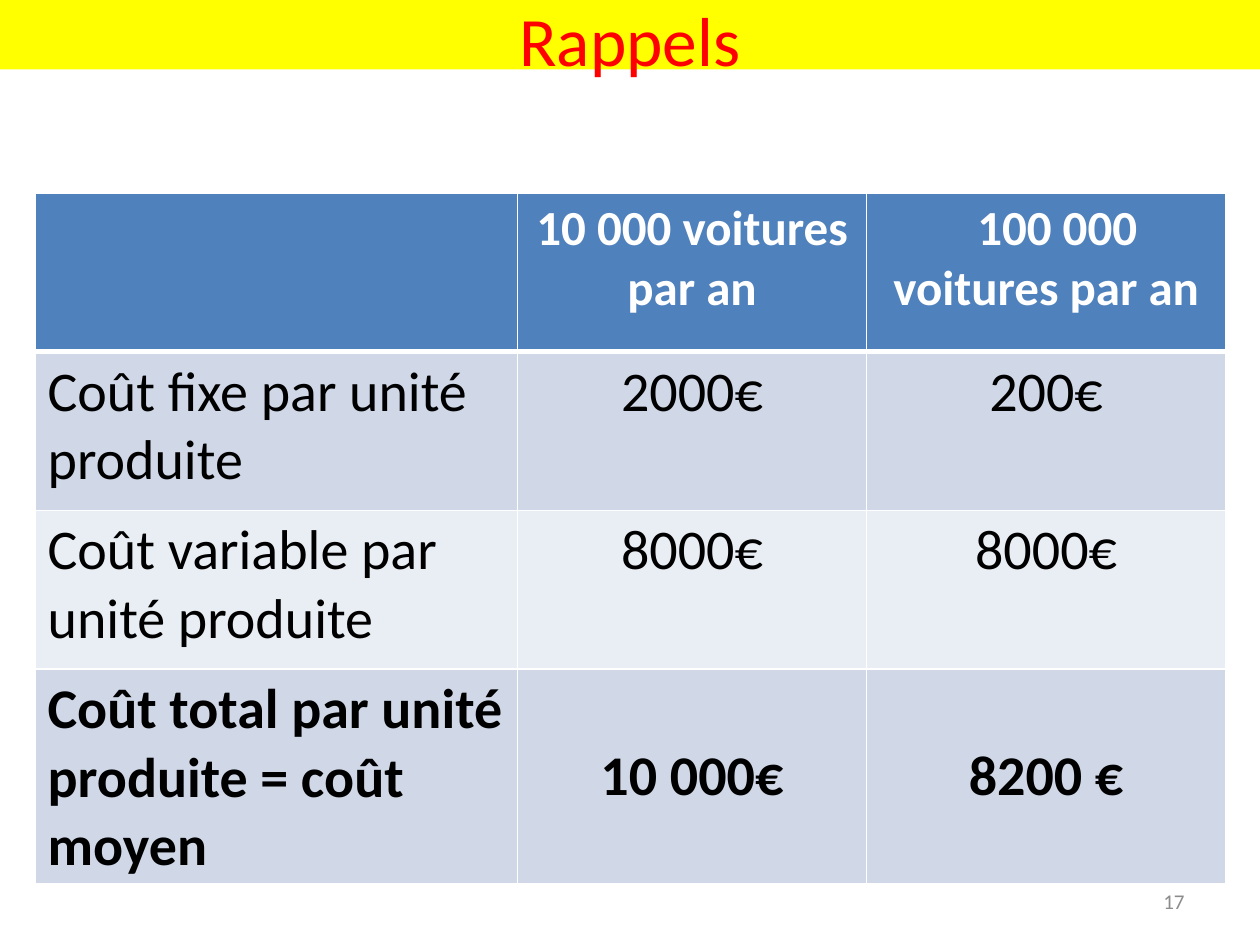
from lxml.etree import SubElement as Sub
from pptx import Presentation
from pptx.dml.color import RGBColor as Rgb
from pptx.enum.shapes import MSO_SHAPE as Kind
from pptx.enum.text import MSO_ANCHOR as Anchor, PP_ALIGN as Align
from pptx.oxml.ns import qn
from pptx.util import Pt

YELLOW = Rgb(0xFF, 0xFF, 0x00)
RED = Rgb(0xFF, 0x00, 0x00)
WHITE = Rgb(0xFF, 0xFF, 0xFF)
BLACK = Rgb(0x00, 0x00, 0x00)
GREY = Rgb(0x8C, 0x8C, 0x8C)
BLUE = Rgb(0x4F, 0x81, 0xBD)
DARK = Rgb(0xD0, 0xD8, 0xE8)
LIGHT = Rgb(0xE9, 0xED, 0xF4)

FONT = "Calibri"
COLS = (275.75, 199.5, 205.2)
ROW = 90.72
COSTS = (
    ("", "10 000 voitures par an", "100 000 voitures par an"),
    ("Coût fixe par unité produite", "2000€", "200€"),
    ("Coût variable par unité produite", "8000€", "8000€"),
    ("Coût total par unité produite = coût moyen", "10 000€", "8200 €"),
)


def write(frame, text, size, color, align, bold=False):
    frame.word_wrap = True
    para = frame.paragraphs[0]
    para.alignment = align
    if text:
        run = para.add_run()
        run.text = text
        font = run.font
        font.name, font.size, font.bold = FONT, Pt(size), bold
        font.color.rgb = color
    return para


def add_title(slide, text):
    bar = slide.shapes.add_shape(Kind.RECTANGLE, 0, 0, Pt(720), Pt(39.6))
    bar.shadow.inherit = False
    bar.fill.solid()
    bar.fill.fore_color.rgb = YELLOW
    bar.line.fill.background()
    frame = bar.text_frame
    frame.margin_top, frame.margin_bottom = Pt(4.5), 0
    frame.vertical_anchor = Anchor.MIDDLE
    write(frame, text, 39.6, RED, Align.CENTER)


def add_number(slide, text):
    box = slide.shapes.add_textbox(Pt(516), Pt(500.5), Pt(168), Pt(28.75))
    box.text_frame.vertical_anchor = Anchor.MIDDLE
    write(box.text_frame, text, 12, GREY, Align.RIGHT)


def set_edges(cell, base):
    props = cell._tc.get_or_add_tcPr()
    for side, width in (("L", 1), ("R", 1), ("T", 1), ("B", base)):
        edge = Sub(props, qn(f"a:ln{side}"), w=str(Pt(width)))
        Sub(Sub(edge, qn("a:solidFill")), qn("a:srgbClr"), val=str(WHITE))


def fill_cell(cell, text, row, col, last):
    head, total = row == 0, row == last
    set_edges(cell, 3 if head else 1)
    cell.fill.solid()
    cell.fill.fore_color.rgb = BLUE if head else DARK if row % 2 else LIGHT
    if total and col:
        cell.vertical_anchor = Anchor.MIDDLE
    return write(cell.text_frame, text, 28 if head else 32,
                 WHITE if head else BLACK,
                 Align.CENTER if col else Align.LEFT, head or total)


def add_costs(slide):
    count = len(COSTS)
    frame = slide.shapes.add_table(count, len(COLS), Pt(20), Pt(110.2),
                                   Pt(sum(COLS)), Pt(ROW * count))
    table = frame.table
    for col, width in zip(table.columns, COLS):
        col.width = Pt(width)
    for row, texts in enumerate(COSTS):
        table.rows[row].height = Pt(ROW)
        for col, text in enumerate(texts):
            para = fill_cell(table.cell(row, col), text, row, col, count - 1)
            if row == 0 and col == 2:
                para._p.get_or_add_pPr().set("indent", str(Pt(12.6)))


def main():
    deck = Presentation()
    deck.slide_width, deck.slide_height = Pt(720), Pt(540)
    slide = deck.slides.add_slide(deck.slide_layouts[6])
    add_title(slide, "Rappels")
    add_number(slide, "17")
    add_costs(slide)
    deck.save("out.pptx")


if __name__ == "__main__":
    main()
